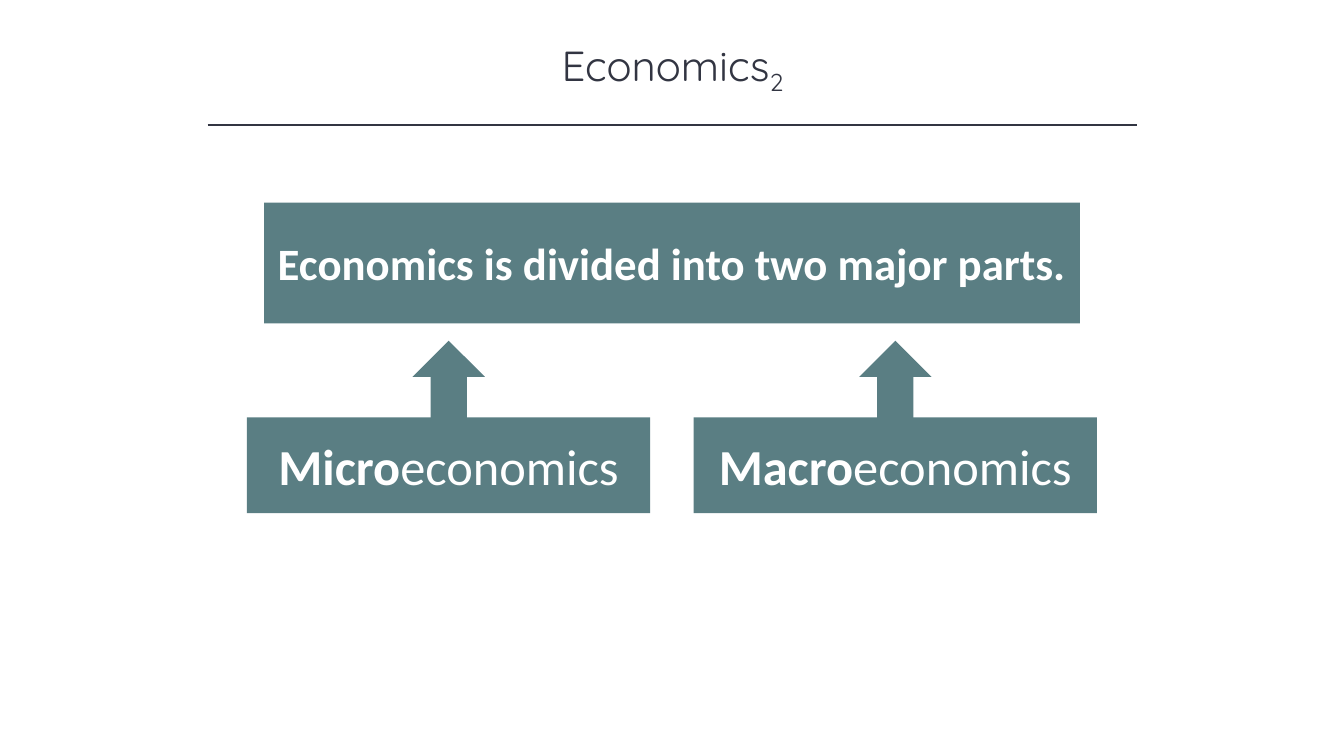
from lxml.etree import SubElement
from pptx import Presentation
from pptx.dml.color import RGBColor
from pptx.enum.shapes import MSO_CONNECTOR as Connector, MSO_SHAPE as Shape
from pptx.enum.text import MSO_ANCHOR as Anchor, PP_ALIGN as Align
from pptx.oxml.ns import qn
from pptx.util import Inches, Pt

INK = RGBColor(0x32, 0x35, 0x42)
TEAL = RGBColor(0x5A, 0x7E, 0x83)
WHITE = RGBColor(0xFF, 0xFF, 0xFF)


def write(shape, *spans, size, font, color, wrap=True):
    """Centre one paragraph in a shape; each span is (text, bold, baseline)."""
    frame = shape.text_frame
    frame.word_wrap = wrap
    frame.vertical_anchor = Anchor.MIDDLE
    para = frame.paragraphs[0]
    para.alignment = Align.CENTER
    for text, bold, baseline in spans:
        span = para.add_run()
        span.text = text
        span.font.size = Pt(size)
        span.font.name = font
        span.font.bold = bold
        span.font.color.rgb = color
        if baseline:
            span.font._element.set("baseline", str(baseline * 1000))


def add_block(page, kind, left, top, width, height):
    block = page.shapes.add_shape(
        kind, Inches(left), Inches(top), Inches(width), Inches(height))
    block.shadow.inherit = False
    block.fill.solid()
    block.fill.fore_color.rgb = TEAL
    block.line.fill.background()
    return block


def add_title(page, left, top, width, height):
    """Place the heading and the rule below it."""
    box = page.shapes.add_textbox(
        Inches(left), Inches(top), Inches(width), Inches(height))
    write(box, ("Economics", False, 0), ("2", False, -25),
          size=30, font="Quicksand", color=INK)
    inset, rule_top = 0.39, Inches(top + 0.87)
    rule = page.shapes.add_connector(
        Connector.STRAIGHT, Inches(left + inset), rule_top,
        Inches(left + width - inset), rule_top)
    rule.line.color.rgb = INK
    rule.line.width = Pt(1)
    SubElement(rule._element.spPr, qn("a:effectLst"))


def add_banner(page, left, top, width, height):
    banner = add_block(page, Shape.RECTANGLE, left, top, width, height)
    write(banner, ("Economics is divided into two major parts.", True, 0),
          size=32, font="Calibri", color=WHITE, wrap=False)


def add_branch(page, prefix, left, top, width, height):
    """Place a branch of economics with an arrow rising from its top."""
    arrow_width, arrow_height, rise = 0.72, 0.81, 0.76
    add_block(page, Shape.UP_ARROW, left + (width - arrow_width) / 2,
              top - rise, arrow_width, arrow_height)
    label = add_block(page, Shape.RECTANGLE, left, top, width, height)
    write(label, (prefix, True, 0), ("economics", False, 0),
          size=36, font="Calibri", color=WHITE)


def main():
    deck = Presentation()
    deck.slide_width, deck.slide_height = Inches(13.33), Inches(7.5)
    page = deck.slides.add_slide(deck.slide_layouts[6])
    add_title(page, 1.67, 0.37, 10, 0.61)
    add_banner(page, 2.62, 2.01, 8.09, 1.2)
    for column, prefix in enumerate(("Micro", "Macro")):
        add_branch(page, prefix, 2.45 + column * 4.43, 4.14, 4, 0.95)
    deck.save("out.pptx")


if __name__ == "__main__":
    main()
